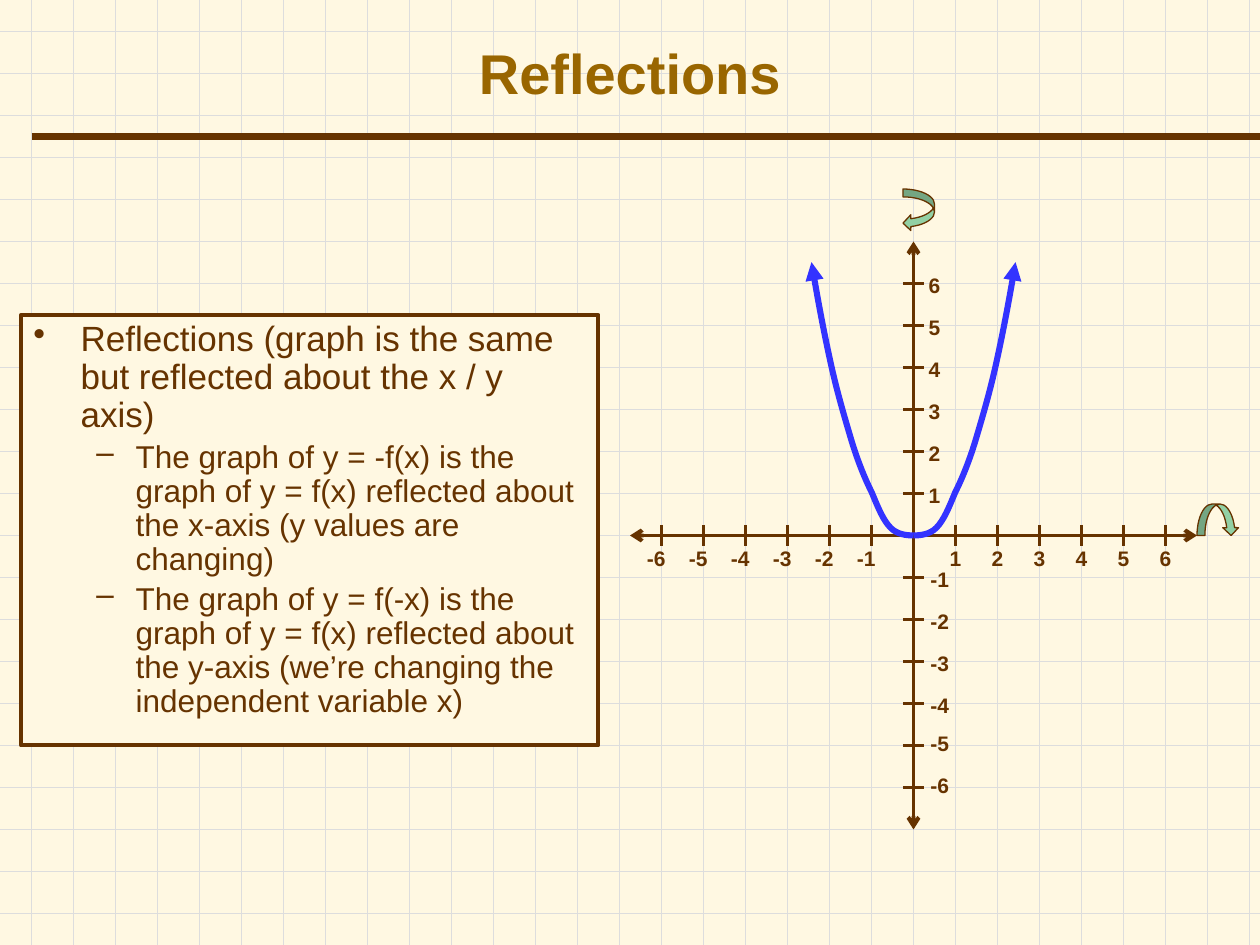
from pptx import Presentation
from pptx.dml.color import RGBColor
from pptx.enum import shapes, text
from pptx.oxml import ns
from pptx.util import Pt
from lxml import etree

CREAM = RGBColor(0xFF, 0xF8, 0xE2)
GRID = RGBColor(0xDD, 0xDD, 0xDD)
BROWN = RGBColor(0x66, 0x33, 0x00)
GOLD = RGBColor(0x99, 0x66, 0x00)
BLUE = RGBColor(0x33, 0x33, 0xFF)
GREEN = RGBColor(0x92, 0xD0, 0xA4)

FONT = "Arial"
WIDTH, HEIGHT = 720, 540
UNIT = 24  # one square of the graph paper
TICKS = [value for value in range(-6, 7) if value]

# Right half of the parabola: Bezier points in points from the vertex, y upwards
BRANCH = [
    (4.3, 0), (9.4, 0.7), (13, 4.3),
    (17.3, 8.6), (20.2, 15.8), (23.8, 24.5),
    (28.1, 33.1), (32.4, 43.9), (36, 56.2),
    (39.6, 68.4), (43.9, 82.8), (47.5, 99.4),
    (51.1, 115.9), (54.7, 134.6), (58.3, 156.2),
]
BULLETS = [
    (0, "Reflections (graph is the same but reflected about the x / y axis)"),
    (1, "The graph of y = -f(x) is the graph of y = f(x) reflected about "
        "the x-axis (y values are changing)"),
    (1, "The graph of y = f(-x) is the graph of y = f(x) reflected about "
        "the y-axis (we’re changing the independent variable x)"),
]


def add_child(parent, tag, **attributes):
    return etree.SubElement(parent, ns.qn(tag), attributes)


def add_line(page, start, end, color, weight, arrows=False):
    line = page.shapes.add_connector(
        shapes.MSO_CONNECTOR.STRAIGHT, *map(Pt, (*start, *end)))
    line.line.color.rgb = color
    line.line.width = Pt(weight)
    if arrows:
        outline = line.line._get_or_add_ln()
        add_child(outline, "a:headEnd", type="arrow")
        add_child(outline, "a:tailEnd", type="arrow")
    add_child(line._element.spPr, "a:effectLst")


def set_font(target, size, color, bold=False):
    target.font.name = FONT
    target.font.size = Pt(size)
    target.font.color.rgb = color
    target.font.bold = bold


def add_graph_paper(page, width, height):
    for y in range(18, height, UNIT):
        add_line(page, (0, y), (width, y), GRID, 1)
    for x in range(18, width, UNIT):
        add_line(page, (x, 0), (x, height), GRID, 1)


def add_title(page, left, top, width, height):
    add_line(page, (18, 78), (WIDTH, 78), BROWN, 4.5)
    title = page.shapes.title
    title.left, title.top, title.width, title.height = map(
        Pt, (left, top, width, height))
    frame = title.text_frame
    frame.text = "Reflections"
    frame.auto_size = text.MSO_AUTO_SIZE.NONE
    frame.vertical_anchor = text.MSO_ANCHOR.MIDDLE
    para = frame.paragraphs[0]
    para.alignment = text.PP_ALIGN.CENTER
    set_font(para, 32, GOLD, bold=True)
    page.shapes._spTree.append(title._element)  # in front of the graph paper


def add_rules(page, left, top, width, height):
    """Framed list of the two reflection rules."""
    box = page.shapes.add_shape(
        shapes.MSO_SHAPE.RECTANGLE, *map(Pt, (left, top, width, height)))
    box.shadow.inherit = False
    box.fill.solid()
    box.fill.fore_color.rgb = CREAM
    box.line.color.rgb = BROWN
    box.line.width = Pt(2.25)
    frame = box.text_frame
    frame.word_wrap = True
    frame.vertical_anchor = text.MSO_ANCHOR.TOP
    styles = [(20, 27, -27, "•"), (18, 58.5, -22.5, "–")]
    for index, (level, wording) in enumerate(BULLETS):
        para = frame.add_paragraph() if index else frame.paragraphs[0]
        size, margin, indent, mark = styles[level]
        para.text = wording
        para.level = level
        para.alignment = text.PP_ALIGN.LEFT
        para.line_spacing = 0.9
        para.space_before = Pt(size * 0.2)
        set_font(para, size, BROWN)
        properties = para._p.get_or_add_pPr()
        properties.set("marL", str(Pt(margin)))
        properties.set("indent", str(Pt(indent)))
        bullet = etree.Element(ns.qn("a:buChar"), {"char": mark})
        properties.find(ns.qn("a:defRPr")).addprevious(bullet)


def add_label(page, value, left, top):
    box = page.shapes.add_textbox(
        Pt(left), Pt(top), Pt(18 if value < 0 else 12), Pt(14.4))
    frame = box.text_frame
    frame.margin_left = frame.margin_right = 0
    frame.margin_top = frame.margin_bottom = 0
    frame.word_wrap = True
    para = frame.paragraphs[0]
    para.text = str(value)
    para.alignment = text.PP_ALIGN.CENTER
    set_font(para, 12, BROWN, bold=True)


def add_axes(page, x, y):
    """Axes, ticks and numbers around the point where the axes cross."""
    add_line(page, (x, y - 168), (x, y + 168), BROWN, 2.25, arrows=True)
    add_line(page, (x - 162, y), (x + 162, y), BROWN, 2.25, arrows=True)
    for value in TICKS:
        across, down = x + value * UNIT, y - value * UNIT
        add_line(page, (across, y - 6), (across, y + 6), BROWN, 1.5)
        add_line(page, (x - 6, down), (x + 6, down), BROWN, 1.5)
        add_label(page, value, across - (12 if value < 0 else 6), y + 6)
        raised = 2.4 if value <= -5 else 0
        add_label(page, value, x + 6, down - 6 - raised)


def add_branch(page, x, y, side):
    """Half of the parabola; side is 1 for the right and -1 for the left."""
    builder = page.shapes.build_freeform(Pt(x), Pt(y))
    builder.add_line_segments(
        [(Pt(x + side * dx), Pt(y - dy)) for dx, dy in BRANCH], close=False)
    curve = builder.convert_to_shape()
    curve.shadow.inherit = False
    curve.fill.background()
    curve.line.color.rgb = BLUE
    curve.line.width = Pt(3.5)
    add_child(curve.line._get_or_add_ln(), "a:tailEnd", type="triangle")
    # Every three straight segments hold the control points of one Bezier piece
    segments = list(curve._element.iter(ns.qn("a:lnTo")))
    outline = segments[0].getparent()
    for first in range(0, len(segments), 3):
        bezier = add_child(outline, "a:cubicBezTo")
        for segment in segments[first:first + 3]:
            bezier.append(segment[0])
            outline.remove(segment)


def add_turn_arrow(page, left, top, rotation=0):
    arrow = page.shapes.add_shape(
        shapes.MSO_SHAPE.CURVED_LEFT_ARROW, Pt(left), Pt(top), Pt(18), Pt(24))
    arrow.rotation = rotation
    arrow.shadow.inherit = False
    arrow.fill.solid()
    arrow.fill.fore_color.rgb = GREEN
    arrow.line.color.rgb = BROWN
    arrow.line.width = Pt(0.75)


def add_graph(page, x, y):
    add_axes(page, x, y)
    for side in (1, -1):
        add_branch(page, x, y, side)
    add_turn_arrow(page, x - 6, y - 198)
    add_turn_arrow(page, x + 165, y - 21, rotation=270)


def main():
    deck = Presentation()
    deck.slide_width, deck.slide_height = Pt(WIDTH), Pt(HEIGHT)
    page = deck.slides.add_slide(deck.slide_layouts.get_by_name("Title Only"))
    page.background.fill.solid()
    page.background.fill.fore_color.rgb = CREAM
    add_graph_paper(page, WIDTH, HEIGHT)
    add_title(page, 12, 10, 696, 62)
    add_rules(page, 12, 180, 330, 246)
    add_graph(page, 522, 306)
    deck.save("out.pptx")


if __name__ == "__main__":
    main()
